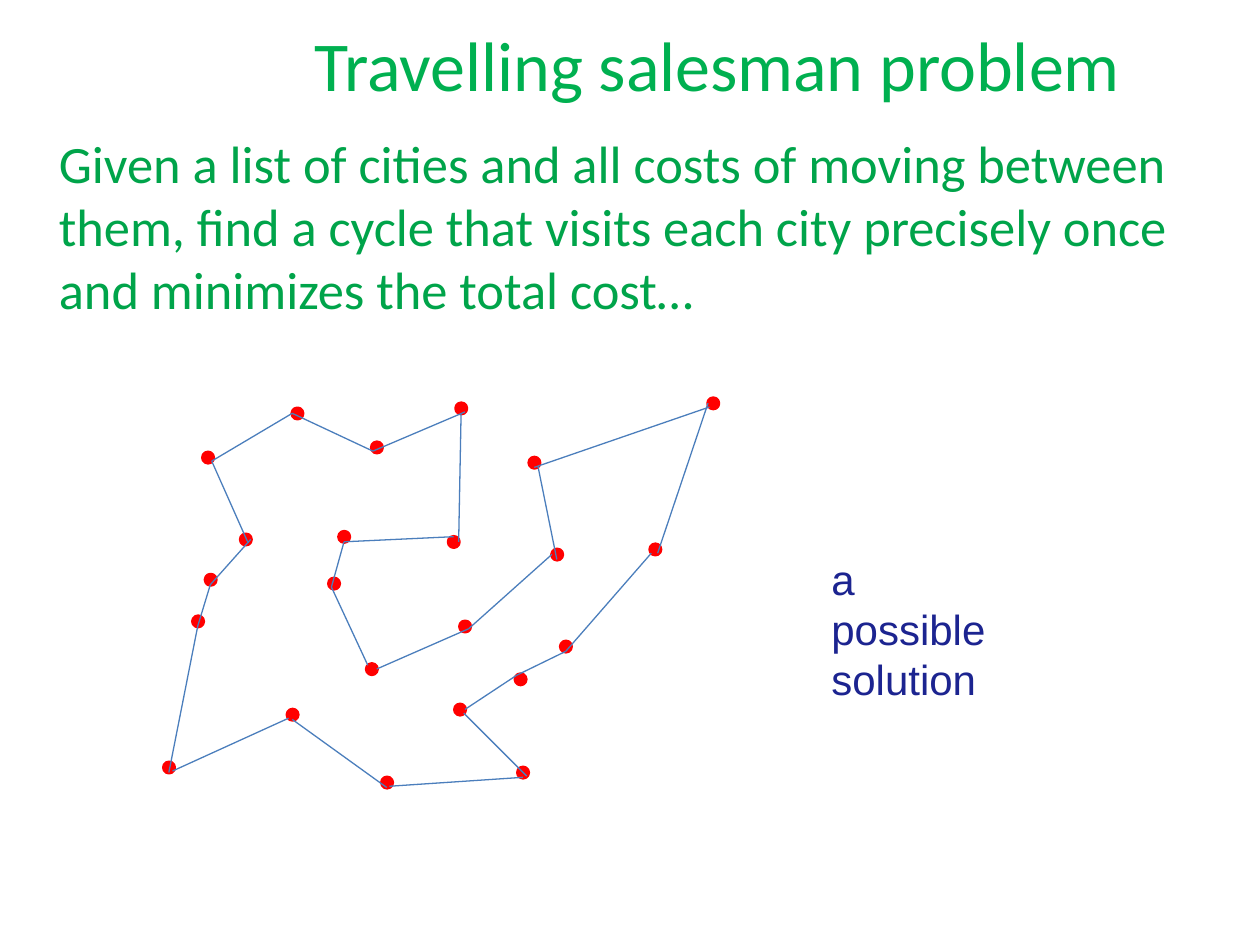
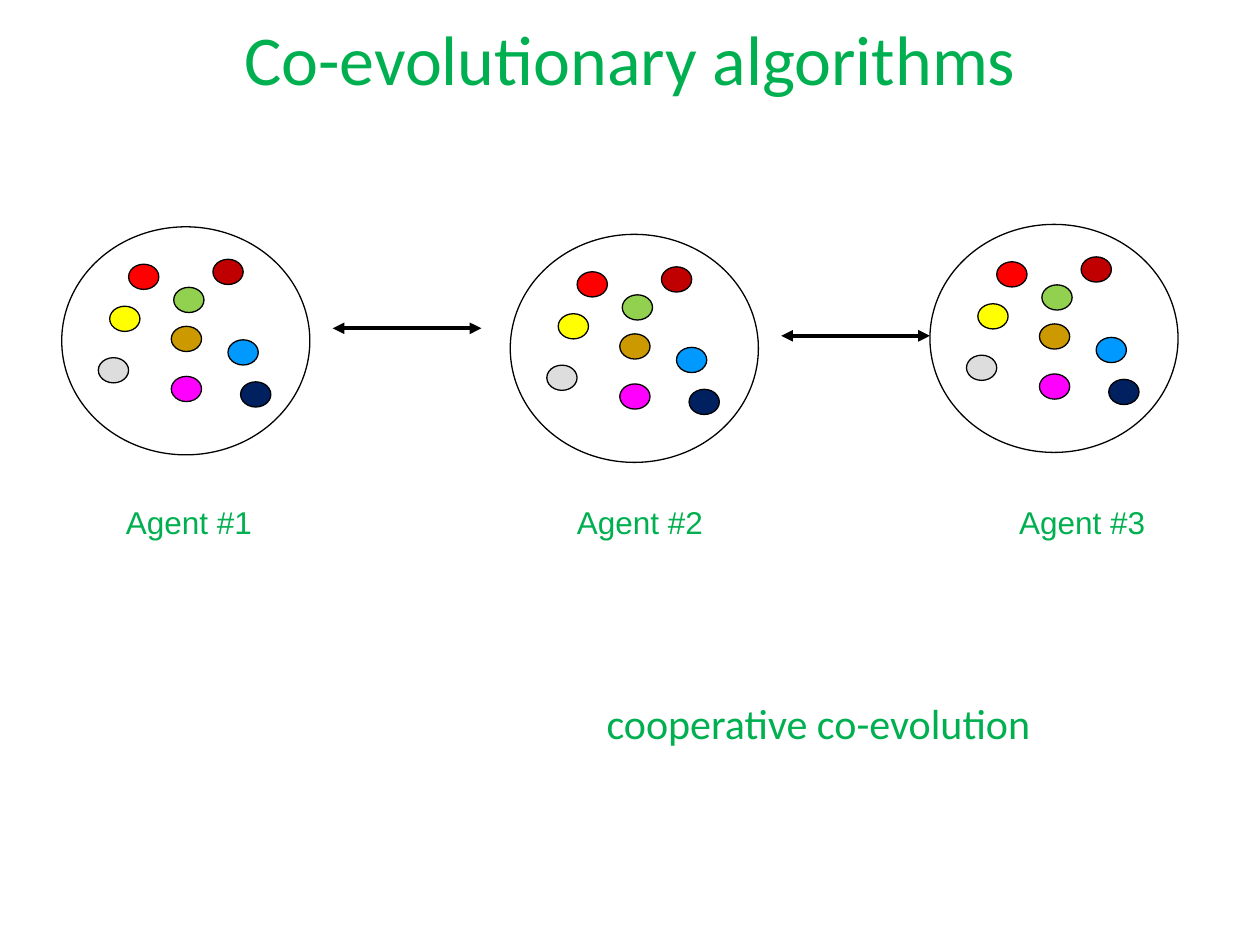
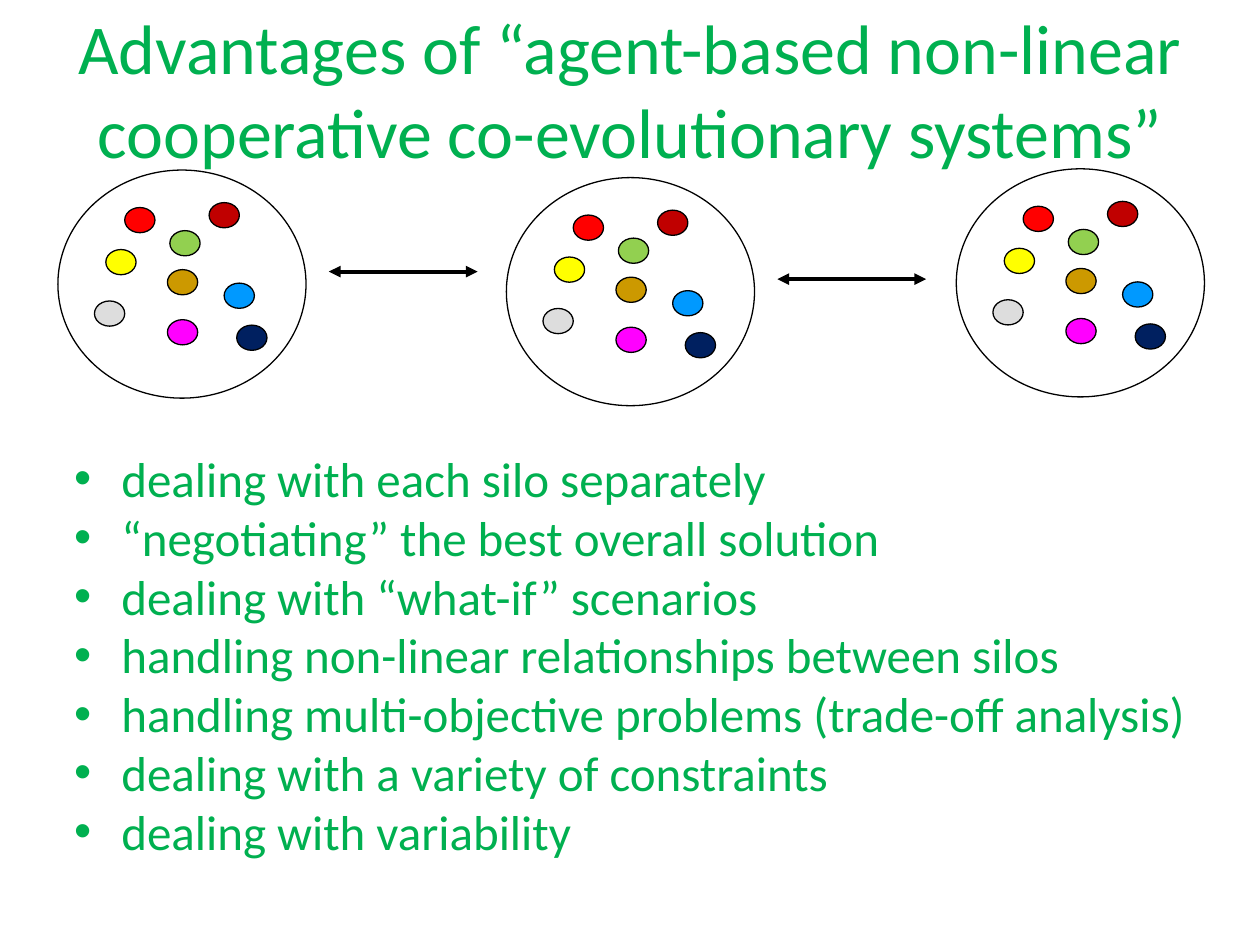
from lxml import etree
from pptx import Presentation
from pptx.dml.color import RGBColor
from pptx.enum.shapes import MSO_CONNECTOR, MSO_SHAPE
from pptx.enum.text import MSO_ANCHOR, PP_ALIGN
from pptx.oxml.ns import qn
from pptx.util import Pt

GREEN = RGBColor(0x00, 0xB0, 0x50)
BODY_GREEN = RGBColor(0x00, 0xA4, 0x4A)
NAVY = RGBColor(0x1C, 0x24, 0x90)
TOUR_BLUE = RGBColor(0x4B, 0x7E, 0xBC)
RED = RGBColor(0xFF, 0x00, 0x00)
BLACK = RGBColor(0x00, 0x00, 0x00)
LIME = RGBColor(0x92, 0xD0, 0x50)
GOLD = RGBColor(0xCC, 0x99, 0x00)
SKY = RGBColor(0x00, 0x99, 0xFF)
MAGENTA = RGBColor(0xFF, 0x00, 0xFF)
CRIMSON = RGBColor(0xC0, 0x00, 0x00)
YELLOW = RGBColor(0xFF, 0xFF, 0x00)
GREY = RGBColor(0xDD, 0xDD, 0xDD)
MIDNIGHT = RGBColor(0x00, 0x20, 0x60)

CITY_SIZE = 6
AGENT_W, AGENT_H = 141.8, 130.3
DOT_W, DOT_H = 17.3, 14.4
ARROW_DX, ARROW_DY, ARROW_LENGTH = 154.8, 58, 85


def add_text(s, box, lines, size, font="Calibri", color=GREEN, title=False):
    """Add a text box with one paragraph per line; a title is centred both ways."""
    tf = s.shapes.add_textbox(*map(Pt, box)).text_frame
    tf.word_wrap = True
    tf.vertical_anchor = MSO_ANCHOR.MIDDLE if title else MSO_ANCHOR.TOP
    tf.text = "\n".join(lines)
    for p in tf.paragraphs:
        p.alignment = PP_ALIGN.CENTER if title else PP_ALIGN.LEFT
        for r in p.runs:
            r.font.name = font
            r.font.size = Pt(size)
            r.font.color.rgb = color
    return tf


def add_oval(s, x, y, w, h, fill, line, line_width):
    sp = s.shapes.add_shape(MSO_SHAPE.OVAL, Pt(x), Pt(y), Pt(w), Pt(h))
    sp.shadow.inherit = False
    if fill is None:
        sp.fill.background()
    else:
        sp.fill.solid()
        sp.fill.fore_color.rgb = fill
    sp.line.color.rgb = line
    sp.line.width = Pt(line_width)


prs = Presentation()
prs.slide_width, prs.slide_height = Pt(720), Pt(540)
tour, coevolution, advantages = [
    prs.slides.add_slide(prs.slide_layouts[6]) for _ in range(3)
]

# Travelling salesman problem
add_text(tour, (26.6, 71.3, 666.7, 414), [
    "Given a list of cities and all costs of moving between them, find a cycle "
    "that visits each city precisely once and minimizes the total cost…",
], 30, color=BODY_GREEN)
add_text(tour, (100, 0, 620, 73), ["Travelling salesman problem"], 40, title=True)

cities = [
    (115.9, 258.5), (212.4, 252.7), (137.5, 305.3), (110.2, 352.1), (193.7, 303.8),
    (256.3, 306.7), (187.9, 330.5), (164.2, 405.4), (209.5, 379.4), (320.4, 366.5),
    (262.8, 355), (302.4, 261.4), (259.9, 402.5), (218.2, 444.2), (371.5, 311),
    (295.9, 438.5), (315.4, 313.9), (260.6, 230.4), (167, 233.3), (294.5, 385.2),
    (404.6, 227.5), (117.4, 328.3), (93.6, 435.6),
]
for x, y in cities:
    add_oval(tour, x, y, CITY_SIZE, CITY_SIZE, RED, RED, 2)

legs = [
    (121, 263.5, 167, 236.2), (167, 236.2, 213.1, 257.8),
    (213.1, 257.8, 265.7, 235.4), (263.5, 236.2, 262.1, 309.6),
    (259.2, 306.7, 196.6, 309.6), (196.6, 309.6, 189.4, 335.5),
    (189.4, 335.5, 210.2, 380.2), (215.3, 382.3, 267.8, 359.3),
    (267.8, 359.3, 315.4, 316.8), (318.2, 319.7, 307.4, 266.4),
    (305.3, 267.1, 405.4, 232.6), (404.6, 230.4, 375.8, 316.1),
    (372.2, 316.1, 323.3, 372.2), (323.3, 372.2, 295.2, 385.9),
    (295.2, 385.9, 265.7, 405.4), (265, 407.5, 301, 443.5),
    (298.8, 444.2, 222.5, 449.3), (221, 450, 167, 411.1),
    (164.9, 410.4, 98.6, 440.6), (96.5, 441.4, 113, 357.8),
    (113, 357.8, 120.2, 334.1), (120.2, 334.1, 143.3, 308.2),
    (141.8, 310.3, 121, 263.5),
]
add_text(tour, (468, 312.5, 117.4, 65.5), ["a possible", "solution"], 24, "Arial", NAVY)

# Co-evolutionary algorithms
add_text(coevolution, (0, 0, 720, 66.2), ["Co-evolutionary algorithms"], 40, title=True)
for number, x in enumerate((64.8, 322.6, 575.3), start=1):
    add_text(coevolution, (x, 283.7, 87.1, 28.8), [f"Agent #{number}"], 18, "Arial")
add_text(coevolution, (339.5, 395, 265, 36.5), ["cooperative co-evolution"], 24)

# Advantages
tf = add_text(advantages, (0, 0, 720, 101.6), [
    "Advantages of “agent-based non-linear",
    "cooperative co-evolutionary systems”",
], 40, title=True)
pPr = tf.paragraphs[0]._p.get_or_add_pPr()
pPr.set("marL", "0")
pPr.set("indent", str(Pt(-35)))

tf = add_text(advantages, (35.3, 252.7, 684.7, 244.8), [
    "dealing with each silo separately",
    "“negotiating” the best overall solution",
    "dealing with “what-if” scenarios",
    "handling non-linear relationships between silos",
    "handling multi-objective problems (trade-off analysis)",
    "dealing with a variety of constraints",
    "dealing with variability",
], 28)
for p in tf.paragraphs:
    pPr = p._p.get_or_add_pPr()
    pPr.set("marL", str(Pt(27)))
    pPr.set("indent", str(Pt(-27)))
    etree.SubElement(pPr, qn("a:buFont")).set("typeface", "Arial")
    etree.SubElement(pPr, qn("a:buChar")).set("char", "•")

# Agents, each a circle holding the same dots, with an arrow to the next one
dots = [
    (38.2, 21.4, RED), (64, 34.6, LIME), (62.6, 56.9, GOLD),
    (95, 64.6, SKY), (62.6, 85.5, MAGENTA), (86.4, 18.6, CRIMSON),
    (27.4, 45.4, YELLOW), (20.9, 74.8, GREY), (102.2, 88.6, MIDNIGHT),
]
agents = [
    (coevolution, [(35.3, 129.6), (291.6, 133.9), (531.4, 128.2)]),
    (advantages, [(33.1, 97.2), (289.4, 101.5), (546.5, 96.5)]),
]
lines = [(tour, leg, TOUR_BLUE, 0.75, False) for leg in legs]
for s, corners in agents:
    for x, y in corners:
        for dx, dy, color in dots:
            add_oval(s, x + dx, y + dy, DOT_W, DOT_H, color, BLACK, 0.75)
        add_oval(s, x, y, AGENT_W, AGENT_H, None, BLACK, 0.75)
    for x, y in corners[:-1]:
        start, level = x + ARROW_DX, y + ARROW_DY
        arrow = (start, level, start + ARROW_LENGTH, level)
        lines.append((s, arrow, BLACK, 2.25, True))

for s, ends, color, width, has_heads in lines:
    connector = s.shapes.add_connector(MSO_CONNECTOR.STRAIGHT, *map(Pt, ends))
    connector.line.color.rgb = color
    connector.line.width = Pt(width)
    if has_heads:
        ln = connector.line._get_or_add_ln()
        for end in ("a:headEnd", "a:tailEnd"):
            etree.SubElement(ln, qn(end)).set("type", "triangle")
    etree.SubElement(connector._element.spPr, qn("a:effectLst"))

prs.save("out.pptx")
